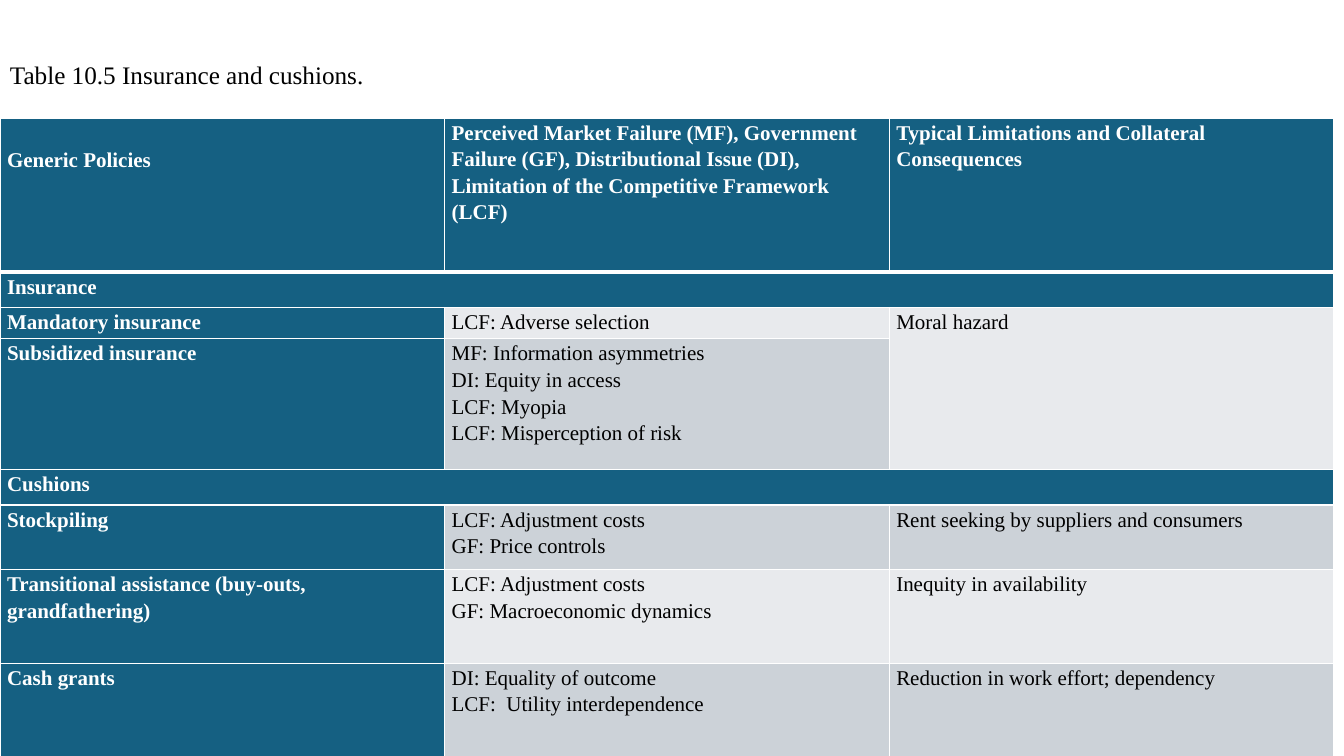
"""Build the slide with the table of insurance and cushion policies."""
from lxml import etree
from pptx import Presentation
from pptx.dml.color import RGBColor
from pptx.enum.text import MSO_ANCHOR
from pptx.oxml.ns import qn
from pptx.util import Inches, Pt

TOP = MSO_ANCHOR.TOP
FONT = "Times New Roman"
WHITE = RGBColor(0xFF, 0xFF, 0xFF)
BLACK = RGBColor(0x00, 0x00, 0x00)
BLUE = RGBColor(0x15, 0x60, 0x82)
LIGHT = RGBColor(0xE8, 0xEA, 0xED)
DARK = RGBColor(0xCC, 0xD2, 0xD8)

COLUMN_WIDTH = 4.41
ROW_HEIGHTS = [1.53, 0.35, 0.31, 1.3, 0.35, 0.64, 0.93, 0.93]
ROWS = [
    ("Generic Policies",
     "Perceived Market Failure (MF), Government Failure (GF), Distributional "
     "Issue (DI), Limitation of the Competitive Framework (LCF)",
     "Typical Limitations and Collateral Consequences"),
    ("Insurance", "", ""),
    ("Mandatory insurance", "LCF: Adverse selection", "Moral hazard"),
    ("Subsidized insurance",
     "MF: Information asymmetries\nDI: Equity in access\n"
     "LCF: Myopia\nLCF: Misperception of risk", ""),
    ("Cushions", "", ""),
    ("Stockpiling", "LCF: Adjustment costs\nGF: Price controls",
     "Rent seeking by suppliers and consumers"),
    ("Transitional assistance (buy-outs, grandfathering)",
     "LCF: Adjustment costs\nGF: Macroeconomic dynamics",
     "Inequity in availability"),
    ("Cash grants", "DI: Equality of outcome\nLCF:  Utility interdependence",
     "Reduction in work effort; dependency"),
]
SECTION_ROWS = (1, 4)


def style_paragraph(p, size, color, spacing, bold=False):
    """Set the font and line spacing of a paragraph."""
    p.font.name = FONT
    p.font.size = Pt(size)
    p.font.bold = bold
    p.font.color.rgb = color
    p.line_spacing = spacing


def add_border(cell, side, width):
    """Draw a white border on one side (L, R, T or B) of a cell."""
    tcPr = cell._tc.get_or_add_tcPr()
    ln = etree.SubElement(tcPr, qn(f"a:ln{side}"), w=str(Pt(width)))
    fill = etree.SubElement(ln, qn("a:solidFill"))
    etree.SubElement(fill, qn("a:srgbClr"), val=str(WHITE))


def fill_cell(cell, text, row, column):
    """Write and style one table cell according to its place."""
    is_head = row == 0 or column == 0 or row in SECTION_ROWS
    cell.margin_left = cell.margin_right = Inches(0.07)
    cell.margin_top = Inches(0.27 if row == column == 0 else 0)
    cell.margin_bottom = 0
    cell.vertical_anchor = TOP
    cell.text = text
    for p in cell.text_frame.paragraphs:
        style_paragraph(p, 15, WHITE if is_head else BLACK, 1.15, is_head)
    for side in "LRTB":
        under_header = (row, side) in ((0, "B"), (1, "T"))
        add_border(cell, side, 3 if under_header else 1)
    cell.fill.solid()
    band = DARK if row % 2 else LIGHT
    cell.fill.fore_color.rgb = BLUE if is_head else band


def add_title(s, text):
    """Add the table caption above the table."""
    sp = s.shapes.add_textbox(Inches(0), Inches(0.4), Inches(12.42), Inches(1.45))
    tf = sp.text_frame
    tf.word_wrap = True
    tf.vertical_anchor = TOP
    tf.margin_top = Inches(0.22)
    tf.text = text
    style_paragraph(tf.paragraphs[0], 18, BLACK, 0.9)


def add_policy_table(s):
    """Add the policy table with its merged cells."""
    columns = len(ROWS[0])
    table = s.shapes.add_table(
        len(ROWS), columns, Inches(0), Inches(1.17),
        Inches(COLUMN_WIDTH * columns), Inches(sum(ROW_HEIGHTS))).table
    for column in table.columns:
        column.width = Inches(COLUMN_WIDTH)
    for row, height in zip(table.rows, ROW_HEIGHTS):
        row.height = Inches(height)
    for r, texts in enumerate(ROWS):
        for c, text in enumerate(texts):
            fill_cell(table.cell(r, c), text, r, c)
    for r in SECTION_ROWS:
        table.cell(r, 0).merge(table.cell(r, columns - 1))
    table.cell(2, 2).merge(table.cell(3, 2))


def main():
    """Build and save the presentation."""
    prs = Presentation()
    prs.slide_width = Inches(13.33)
    prs.slide_height = Inches(7.5)
    s = prs.slides.add_slide(prs.slide_layouts[6])
    add_title(s, "Table 10.5 Insurance and cushions.")
    add_policy_table(s)
    prs.save("out.pptx")


if __name__ == "__main__":
    main()
